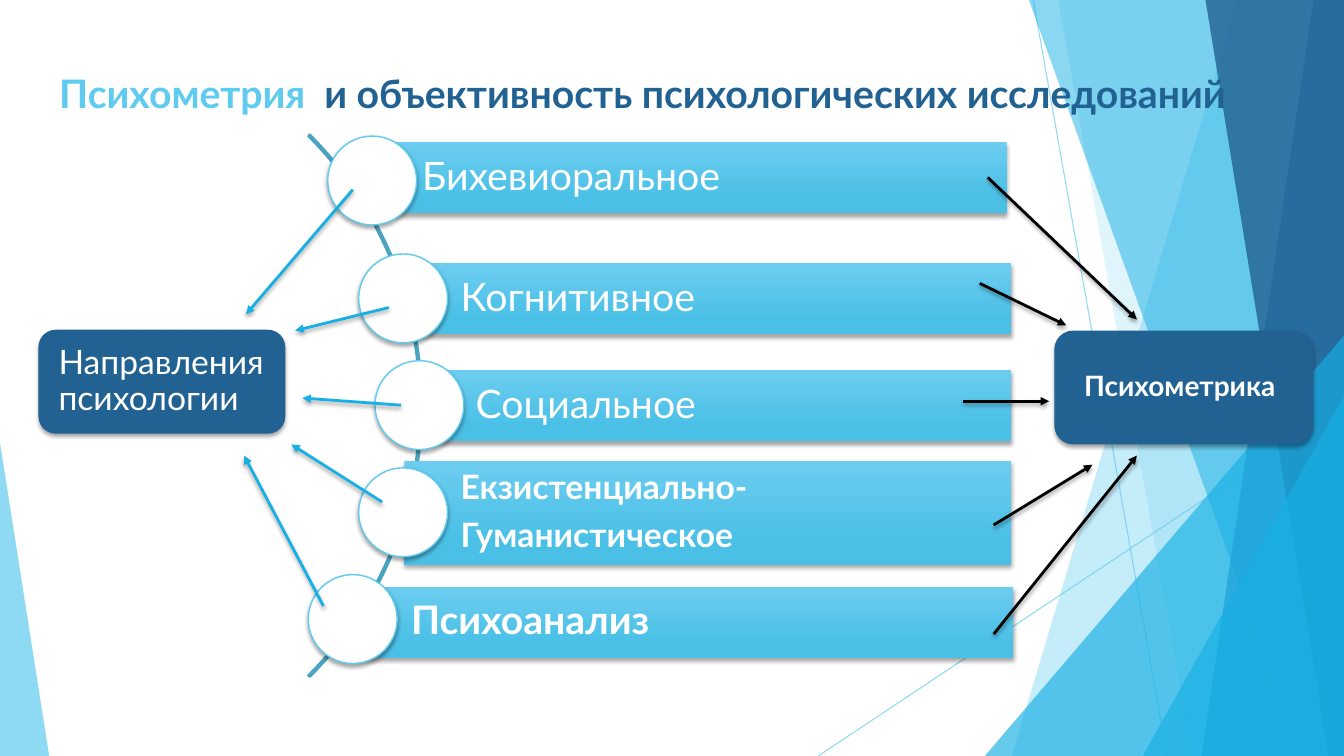
from dataclasses import dataclass

from lxml.etree import SubElement
from pptx import Presentation
from pptx.dml.color import RGBColor
from pptx.enum.shapes import MSO_CONNECTOR, MSO_SHAPE
from pptx.enum.text import MSO_ANCHOR, MSO_AUTO_SIZE, PP_ALIGN
from pptx.oxml.ns import qn
from pptx.util import Cm, Pt

COLORS = {
    "sky": "5FCBEF", "blue": "17B0E4", "steel": "2E83C3", "navy": "226292",
    "arc": "4CA3BF", "bar_top": "6CCDF0", "bar_bottom": "4BC0E6",
    "white": "FFFFFF", "black": "000000",
}
FONT = "Lato"
WIDTH, HEIGHT = 33.87, 19.05
CIRCLE = 2.24
SHADOW = {"blurRad": str(Pt(3)), "dist": str(Pt(2)), "dir": "5400000",
          "algn": "t", "rotWithShape": "0"}

Box = tuple[float, float, float, float]
Line = tuple[float, float, float, float]


@dataclass
class Band:
    top_x: float
    bottom_x: float
    color: str
    opacity: int


@dataclass
class Triangle:
    box: Box
    apex: float
    color: str
    opacity: int


@dataclass
class Direction:
    lines: list[str]
    bar: Box
    circle: tuple[float, float]
    size: int
    bold: bool
    left_arrow: Line
    right_arrow: Line


@dataclass
class Node:
    text: str
    box: Box
    inset: float
    size: int
    bold: bool


BANDS = [
    Band(31.19, 25.5, "sky", 36),
    Band(26.67, 30.05, "sky", 20),
    Band(25.93, 32.79, "blue", 50),
    Band(33.1, 30.28, "steel", 70),
    Band(30.38, 33.48, "navy", 80),
]
TRIANGLES = [
    Triangle((24.82, 8.46, 9.05, 10.59), 1, "blue", 66),
    Triangle((28.8, 9.98, 5.07, 9.07), 1, "blue", 66),
    Triangle((0, 11.15, 1.24, 7.9), 0, "sky", 70),
]
THIN_LINES = [(26.04, 0, 29.41, HEIGHT), (WIDTH, 10.24, 20.62, HEIGHT)]
DIRECTIONS = [
    Direction(["Бихевиоральное"], (9.22, 3.58, 16.15, 1.8), (8.26, 3.43), 28, False,
              (8.89, 4.78, 6.2, 7.92), (24.89, 4.47, 28.65, 8.05)),
    Direction(["Когнитивное"], (10.19, 6.63, 15.29, 1.8), (9.04, 6.4), 28, False,
              (9.8, 7.75, 7.44, 8.33), (24.69, 7.14, 26.87, 8.2)),
    Direction(["Социальное"], (10.57, 9.32, 14.91, 1.8), (9.45, 9.09), 28, False,
              (10.11, 10.21, 7.62, 10.03), (24.28, 10.11, 26.44, 10.11)),
    Direction(["Екзистенциально-", "Гуманистическое"], (10.19, 11.61, 15.29, 2.62),
              (9.04, 11.79), 24, True,
              (9.63, 12.65, 7.34, 11.2), (25.04, 13.23, 27.53, 11.71)),
    Direction(["Психоанализ"], (8.94, 14.78, 16.59, 1.8), (7.77, 14.48), 28, True,
              (8.15, 15.27, 6.15, 11.48), (25.04, 15.98, 28.65, 11.48)),
]
NODES = [
    Node("Направления психологии", (0.97, 8.31, 6.22, 2.62), 0.38, 24, False),
    Node("Психометрика", (26.57, 8.33, 6.53, 2.87), 0.61, 20, True),
]


def rgb(name: str) -> RGBColor:
    return RGBColor.from_string(COLORS[name])


def set_opacity(sp, percent: int) -> None:
    color = next(sp._element.spPr.iter(qn("a:srgbClr")))
    SubElement(color, qn("a:alpha"), val=str(percent * 1000))


def add_shadow(effects) -> None:
    shadow = SubElement(effects, qn("a:outerShdw"), SHADOW)
    color = SubElement(shadow, qn("a:srgbClr"), val=COLORS["black"])
    SubElement(color, qn("a:alpha"), val="35000")


def style_shape(sp, fill: str | None, line: str | None = None,
                width: float = 1, shadow: bool = False):
    sp.shadow.inherit = False
    if shadow:
        add_shadow(sp._element.spPr.find(qn("a:effectLst")))
    if fill:
        sp.fill.solid()
        sp.fill.fore_color.rgb = rgb(fill)
    else:
        sp.fill.background()
    if line:
        sp.line.color.rgb = rgb(line)
        sp.line.width = Pt(width)
    else:
        sp.line.fill.background()
    return sp


def add_shape(shapes, kind: MSO_SHAPE, box: Box, fill: str | None, **style):
    return style_shape(shapes.add_shape(kind, *map(Cm, box)), fill, **style)


def add_line(shapes, ends: Line, color: str, width: float):
    line = shapes.add_connector(MSO_CONNECTOR.STRAIGHT, *map(Cm, ends))
    line.line.color.rgb = rgb(color)
    line.line.width = Pt(width)
    SubElement(line._element.spPr, qn("a:effectLst"))
    return line


def add_arrow(shapes, ends: Line, color: str) -> None:
    spPr = add_line(shapes, ends, color, 2)._element.spPr
    SubElement(spPr.find(qn("a:ln")), qn("a:tailEnd"), type="triangle")
    add_shadow(spPr.find(qn("a:effectLst")))


def add_run(p, text: str, size: int, bold: bool, color: str) -> None:
    r = p.add_run()
    r.text = text
    for name, value in {"name": FONT, "size": Pt(size), "bold": bold}.items():
        setattr(r.font, name, value)
    r.font.color.rgb = rgb(color)


def write_label(sp, lines: list[str], size: int, bold: bool, left: float) -> None:
    tf = sp.text_frame
    frame = {"word_wrap": True, "vertical_anchor": MSO_ANCHOR.MIDDLE,
             "margin_left": Cm(left), "margin_right": Cm(0.2),
             "margin_top": Cm(0.2), "margin_bottom": Cm(0.2)}
    for name, value in frame.items():
        setattr(tf, name, value)
    for i, text in enumerate(lines):
        p = tf.add_paragraph() if i else tf.paragraphs[0]
        paragraph = {"alignment": PP_ALIGN.LEFT, "line_spacing": 0.9,
                     "space_after": Pt(size * 0.35)}
        for name, value in paragraph.items():
            setattr(p, name, value)
        add_run(p, text, size, bold, "white")


def draw_background(shapes) -> None:
    for ends in THIN_LINES:
        set_opacity(add_line(shapes, ends, "sky", 0.75), 70)
    for band in BANDS:
        builder = shapes.build_freeform(Cm(band.top_x), 0)
        corners = [(WIDTH, 0), (WIDTH, HEIGHT), (band.bottom_x, HEIGHT)]
        builder.add_line_segments([(Cm(x), Cm(y)) for x, y in corners], close=True)
        set_opacity(style_shape(builder.convert_to_shape(), band.color), band.opacity)
    for tri in TRIANGLES:
        sp = add_shape(shapes, MSO_SHAPE.ISOSCELES_TRIANGLE, tri.box, tri.color)
        sp.adjustments[0] = tri.apex
        set_opacity(sp, tri.opacity)


def draw_title(shapes) -> None:
    title = shapes.title
    box = {"left": 1.04, "top": 0.74, "width": 30.3, "height": 2.31}
    for name, value in box.items():
        setattr(title, name, Cm(value))
    tf = title.text_frame
    frame = {"word_wrap": True, "auto_size": MSO_AUTO_SIZE.NONE,
             "vertical_anchor": MSO_ANCHOR.BOTTOM}
    for name, value in frame.items():
        setattr(tf, name, value)
    p = tf.paragraphs[0]
    p.alignment = PP_ALIGN.CENTER
    add_run(p, "Психометрия  ", 28, True, "sky")
    add_run(p, "и объективность психологических исследований", 28, True, "navy")
    # Bring the title in front of the background
    shapes._spTree.append(title._element)


def draw_direction(shapes, item: Direction) -> None:
    bar = add_shape(shapes, MSO_SHAPE.RECTANGLE, item.bar, None, shadow=True)
    bar.fill.gradient()
    bar.fill.gradient_angle = 270
    stops = [(0, "bar_top"), (0.78, "bar_bottom")]
    for stop, (position, color) in zip(bar.fill.gradient_stops, stops):
        stop.position = position
        stop.color.rgb = rgb(color)
    write_label(bar, item.lines, item.size, item.bold, 1.42)
    add_shape(shapes, MSO_SHAPE.OVAL, (*item.circle, CIRCLE, CIRCLE), "white",
              line="sky", shadow=True)


def main() -> None:
    prs = Presentation()
    prs.slide_width, prs.slide_height = Cm(WIDTH), Cm(HEIGHT)
    shapes = prs.slides.add_slide(prs.slide_layouts[5]).shapes
    draw_background(shapes)
    draw_title(shapes)
    # Arc that joins the circles
    arc = add_shape(shapes, MSO_SHAPE.BLOCK_ARC, (-8.69, 0.56, 19.33, 19.33), None,
                    line="arc", width=1.5)
    for i, value in enumerate((189, 27, 0.003)):
        arc.adjustments[i] = value
    for item in DIRECTIONS:
        draw_direction(shapes, item)
    # Boxes on both sides
    for node in NODES:
        sp = add_shape(shapes, MSO_SHAPE.ROUNDED_RECTANGLE, node.box, "navy", shadow=True)
        write_label(sp, [node.text], node.size, node.bold, node.inset)
    # Arrows from the directions to the boxes
    for item in DIRECTIONS:
        add_arrow(shapes, item.left_arrow, "blue")
        add_arrow(shapes, item.right_arrow, "black")
    prs.save("out.pptx")


if __name__ == "__main__":
    main()
